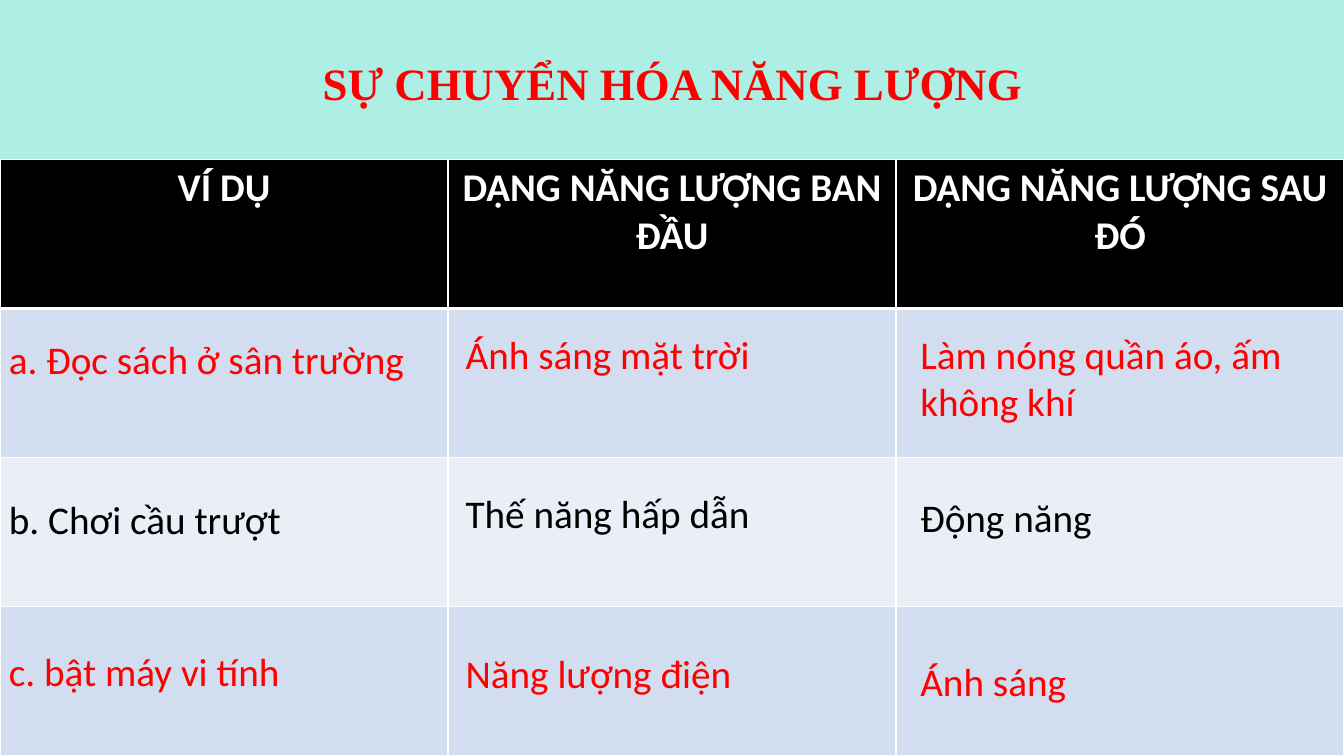
from lxml import etree
from pptx import Presentation
from pptx.dml.color import RGBColor
from pptx.enum.text import MSO_ANCHOR, MSO_AUTO_SIZE, PP_ALIGN
from pptx.oxml.ns import qn
from pptx.util import Inches, Pt

CENTER = PP_ALIGN.CENTER
MIDDLE = MSO_ANCHOR.MIDDLE
GROW = MSO_AUTO_SIZE.SHAPE_TO_FIT_TEXT

MINT = RGBColor(0xAD, 0xEF, 0xE4)
RED = RGBColor(0xFF, 0x00, 0x00)
BLACK = RGBColor(0x00, 0x00, 0x00)
WHITE = RGBColor(0xFF, 0xFF, 0xFF)
BLUE_BAND = RGBColor(0xD2, 0xDE, 0xEF)
PALE_BAND = RGBColor(0xEA, 0xEF, 0xF7)

HEADERS = ["VÍ DỤ", "DẠNG NĂNG LƯỢNG BAN ĐẦU", "DẠNG NĂNG LƯỢNG SAU ĐÓ"]
ROW_FILLS = [BLACK, BLUE_BAND, PALE_BAND, BLUE_BAND]
ANSWER_LEFTS = [-0.01, 4.52, 9.03]
# Each example: text colour, then (text, top, height) for every column
EXAMPLES = [
    (RED, [("a. Đọc sách ở sân trường", 3.28, 0.57),
           ("Ánh sáng mặt trời", 3.23, 0.57),
           ("Làm nóng quần áo, ấm không khí", 3.23, 1.04)]),
    (BLACK, [("b. Chơi cầu trượt", 4.86, 0.57),
             ("Thế năng hấp dẫn", 4.81, 0.57),
             ("Động năng", 4.84, 0.57)]),
    (RED, [("c. bật máy vi tính", 6.37, 0.57),
           ("Năng lượng điện", 6.39, 0.57),
           ("Ánh sáng", 6.47, 0.57)]),
]


def write(frame, text, color, size=28, font="Calibri", bold=False, align=None):
    frame.word_wrap = True
    paragraph = frame.paragraphs[0]
    paragraph.text = text
    paragraph.alignment = align
    run_font = paragraph.runs[0].font
    run_font.name = font
    run_font.size = Pt(size)
    run_font.bold = bold
    run_font.color.rgb = color


def add_border(cell, side, width):
    line = etree.SubElement(cell._tc.get_or_add_tcPr(), qn(f"a:ln{side}"), w=str(Pt(width)))
    fill = etree.SubElement(line, qn("a:solidFill"))
    etree.SubElement(fill, qn("a:srgbClr"), val=str(WHITE))


prs = Presentation()
prs.slide_width = Inches(13.33)
prs.slide_height = Inches(7.5)
slide = prs.slides.add_slide(prs.slide_layouts[6])
slide.background.fill.solid()
slide.background.fill.fore_color.rgb = MINT

# Title
title = slide.shapes.add_textbox(Inches(0.92), Inches(0.4), Inches(11.5), Inches(0.91))
write(title.text_frame, "SỰ CHUYỂN HÓA NĂNG LƯỢNG", RED, 32, "Times New Roman", True, CENTER)
title.text_frame.vertical_anchor = MIDDLE
title.text_frame.paragraphs[0].line_spacing = 0.9

# Table grid with its header row
table = slide.shapes.add_table(
    len(ROW_FILLS), len(HEADERS), Inches(0), Inches(1.58), Inches(13.33), Inches(5.92)
).table
for row_index, row_fill in enumerate(ROW_FILLS):
    for column_index in range(len(HEADERS)):
        cell = table.cell(row_index, column_index)
        add_border(cell, "L", 1)
        add_border(cell, "R", 1)
        add_border(cell, "T", 3 if row_index == 1 else 1)
        add_border(cell, "B", 3 if row_index == 0 else 1)
        cell.fill.solid()
        cell.fill.fore_color.rgb = row_fill
for column_index, header in enumerate(HEADERS):
    write(table.cell(0, column_index).text_frame, header, WHITE, bold=True, align=CENTER)

# Examples and answers over the grid
for color, answers in EXAMPLES:
    for left, (text, top, height) in zip(ANSWER_LEFTS, answers):
        answer = slide.shapes.add_textbox(Inches(left), Inches(top), Inches(4.17), Inches(height))
        write(answer.text_frame, text, color)
        answer.text_frame.auto_size = GROW

prs.save("out.pptx")
